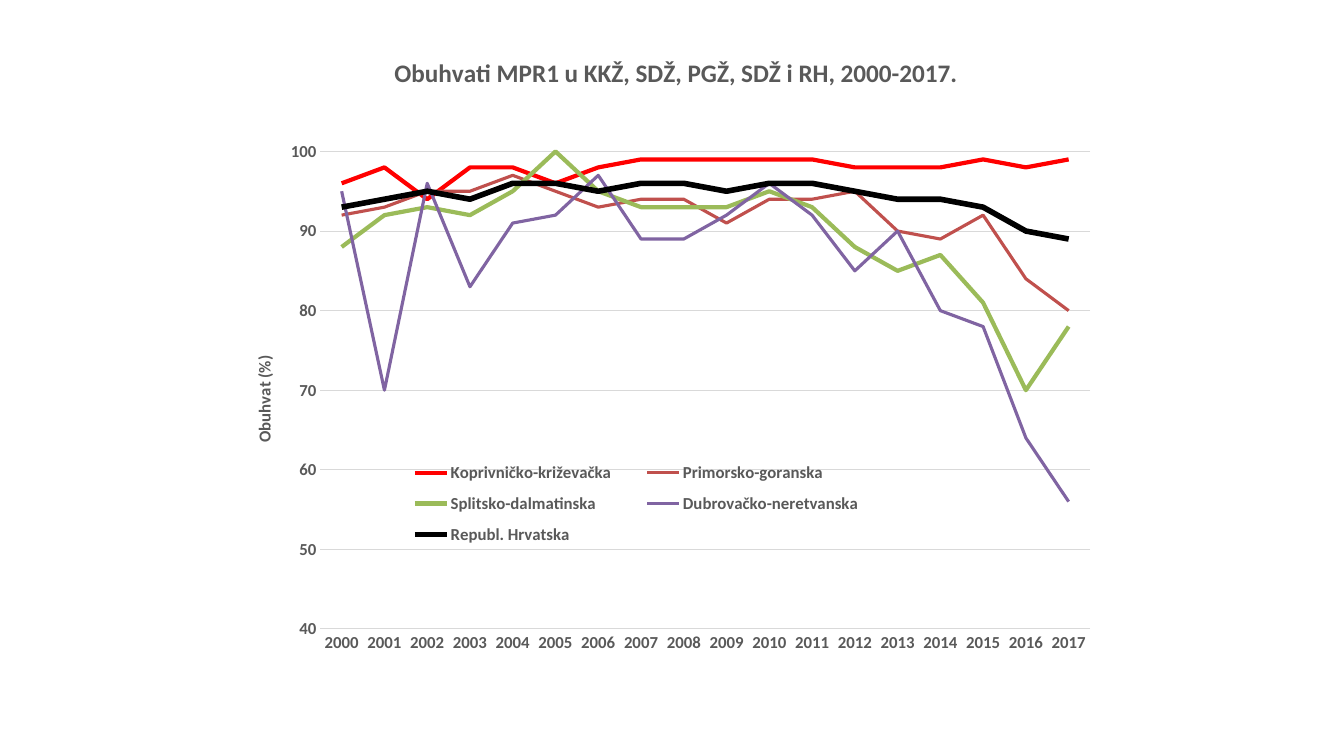
"""Build a slide with a line chart of MPR1 vaccination coverage, 2000-2017."""
from lxml.etree import SubElement
from pptx import Presentation
from pptx.chart.data import CategoryChartData
from pptx.dml.color import RGBColor
from pptx.enum.chart import XL_CHART_TYPE as ChartType
from pptx.enum.chart import XL_LEGEND_POSITION as LegendPosition
from pptx.enum.chart import XL_TICK_MARK as TickMark
from pptx.oxml import parse_xml
from pptx.oxml.ns import nsdecls, qn
from pptx.util import Pt

TITLE = "Obuhvati MPR1 u KKŽ, SDŽ, PGŽ, SDŽ i RH, 2000-2017."
AXIS_TITLE = "Obuhvat (%)"
YEARS = [str(year) for year in range(2000, 2018)]
COLORS = {"text": "595959", "grid": "D9D9D9", "red": "FF0000", "brick": "C0504D",
          "green": "9BBB59", "purple": "8064A2", "black": "000000"}
COUNTIES = [
    ("Koprivničko-križevačka", "red", 3,
     (96, 98, 94, 98, 98, 96, 98, 99, 99, 99, 99, 99, 98, 98, 98, 99, 98, 99)),
    ("Primorsko-goranska", "brick", 2.25,
     (92, 93, 95, 95, 97, 95, 93, 94, 94, 91, 94, 94, 95, 90, 89, 92, 84, 80)),
    ("Splitsko-dalmatinska", "green", 3,
     (88, 92, 93, 92, 95, 100, 95, 93, 93, 93, 95, 93, 88, 85, 87, 81, 70, 78)),
    ("Dubrovačko-neretvanska", "purple", 2.25,
     (95, 70, 96, 83, 91, 92, 97, 89, 89, 92, 96, 92, 85, 90, 80, 78, 64, 56)),
    ("Republ. Hrvatska", "black", 4,
     (93, 94, 95, 94, 96, 96, 95, 96, 96, 95, 96, 96, 95, 94, 94, 93, 90, 89)),
]
LAYOUTS = [
    ("c:chart/c:title", 1, {"x": 0.176, "y": 0.04}),
    ("c:chart/c:plotArea/c:valAx/c:title", 1, {"x": 0.015, "y": 0.465}),
    ("c:chart/c:legend", 1, {"x": 0.17, "y": 0.605, "w": 0.58, "h": 0.145}),
    ("c:chart/c:plotArea", 0, {"x": 0.096, "y": 0.182, "w": 0.886, "h": 0.672}),
]


def color(name):
    return RGBColor.from_string(COLORS[name])


def style_font(font, size):
    font.name, font.size, font.bold = "Calibri", Pt(size), True
    font.color.rgb = color("text")


def style_line(line, name, width):
    line.color.rgb = color(name)
    line.width = Pt(width)


def write_title(text_frame, text, size):
    text_frame.text = text
    style_font(text_frame.paragraphs[0].runs[0].font, size)


def place(parent, index, fractions):
    for old in parent.findall(qn("c:layout")):
        parent.remove(old)
    layout = parse_xml(f"<c:layout {nsdecls('c')}><c:manualLayout/></c:layout>")
    manual = layout[0]
    if parent.tag == qn("c:plotArea"):
        SubElement(manual, qn("c:layoutTarget")).set("val", "inner")
    for key in ("x", "y"):
        SubElement(manual, qn(f"c:{key}Mode")).set("val", "edge")
    for key, value in fractions.items():
        SubElement(manual, qn(f"c:{key}")).set("val", str(value))
    parent.insert(index, layout)


def build_chart(slide):
    data = CategoryChartData(number_format="0")
    data.categories = YEARS
    for name, _, _, values in COUNTIES:
        data.add_series(name, values)
    chart = slide.shapes.add_chart(
        ChartType.LINE, Pt(169.2), Pt(15.84), Pt(620.64), Pt(507.6), data).chart
    chart.font.name, chart.font.size = "Calibri", Pt(10)
    chart.has_title = True
    write_title(chart.chart_title.text_frame, TITLE, 18)

    chart.plots[0].vary_by_categories = False
    for series, (_, name, width, _) in zip(chart.plots[0].series, COUNTIES):
        series.smooth = False
        style_line(series.format.line, name, width)

    years, coverage = chart.category_axis, chart.value_axis
    for axis in (years, coverage):
        axis.major_tick_mark = axis.minor_tick_mark = TickMark.NONE
        style_font(axis.tick_labels.font, 12)
    style_line(years.format.line, "grid", 0.75)
    coverage.format.line.fill.background()
    coverage.minimum_scale, coverage.maximum_scale, coverage.major_unit = 40, 100, 10
    style_line(coverage.major_gridlines.format.line, "grid", 0.75)
    write_title(coverage.axis_title.text_frame, AXIS_TITLE, 12)

    chart.has_legend = True
    chart.legend.position = LegendPosition.BOTTOM
    chart.legend.include_in_layout = False
    style_font(chart.legend.font, 12)

    for location, index, fractions in LAYOUTS:
        place(chart._chartSpace.xpath(location)[0], index, fractions)


def main():
    deck = Presentation()
    deck.slide_width, deck.slide_height = Pt(960), Pt(540)
    build_chart(deck.slides.add_slide(deck.slide_layouts[6]))
    deck.save("out.pptx")


if __name__ == "__main__":
    main()
